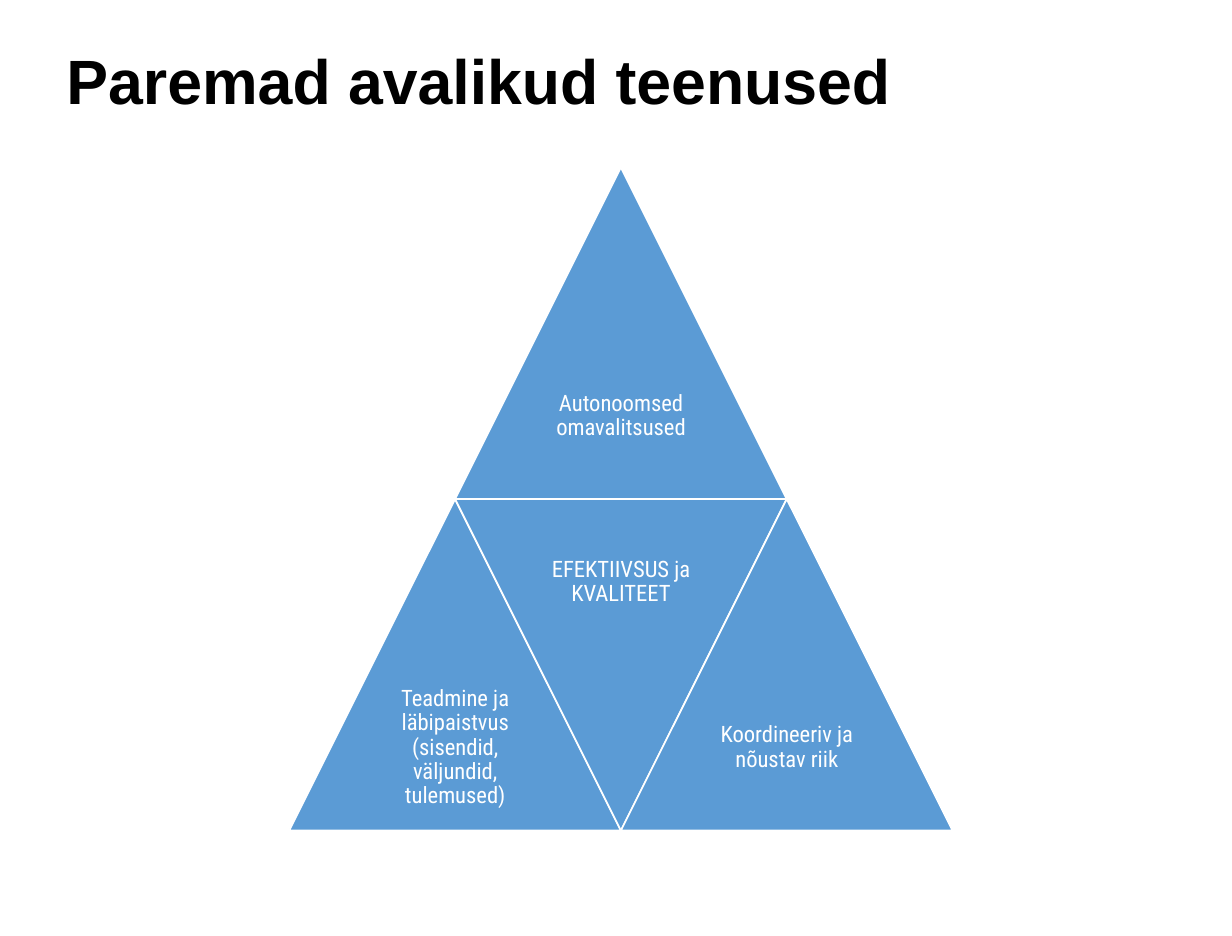
from dataclasses import dataclass

from pptx import Presentation
from pptx.dml.color import RGBColor
from pptx.enum.shapes import MSO_SHAPE
from pptx.enum.text import MSO_ANCHOR, PP_ALIGN
from pptx.util import Cm, Pt

TRIANGLE = MSO_SHAPE.ISOSCELES_TRIANGLE
TOP, MIDDLE = MSO_ANCHOR.TOP, MSO_ANCHOR.MIDDLE
LEFT, CENTER = PP_ALIGN.LEFT, PP_ALIGN.CENTER


@dataclass(frozen=True)
class Theme:
    ink: RGBColor = RGBColor(0x00, 0x00, 0x00)
    blue: RGBColor = RGBColor(0x5B, 0x9B, 0xD5)
    white: RGBColor = RGBColor(0xFF, 0xFF, 0xFF)
    title_font: str = "Arial"
    label_font: str = "Roboto Condensed"
    title_size: Pt = Pt(36)
    label_size: Pt = Pt(13)
    outline: Pt = Pt(1)


THEME = Theme()

# Column and row in half-triangle steps, whether it points down, label
TRIANGLES = [
    (1, 0, False, "Autonoomsed omavalitsused"),
    (0, 2, False, "Teadmine ja läbipaistvus (sisendid, väljundid, tulemused)"),
    (1, 2, True, "EFEKTIIVSUS ja KVALITEET"),
    (2, 2, False, "Koordineeriv ja nõustav riik"),
]


def add_text(s, box, text, margins, anchor, align, spacing):
    """Place a wrapped one-paragraph text box and return its paragraph."""
    tf = s.shapes.add_textbox(*box).text_frame
    tf.word_wrap = True
    tf.vertical_anchor = anchor
    tf.margin_left = tf.margin_right = margins[0]
    tf.margin_top = tf.margin_bottom = margins[1]
    p = tf.paragraphs[0]
    p.text = text
    p.alignment = align
    p.line_spacing = spacing
    return p


def add_title(s, box, text):
    p = add_text(s, box, text, (Cm(0.25), Cm(0.15)), TOP, LEFT, 0.88)
    p.font.name = THEME.title_font
    p.font.size = THEME.title_size
    p.font.bold = True
    p.font.color.rgb = THEME.ink


def add_triangle(s, x, y, side, points_down, label):
    sp = s.shapes.add_shape(TRIANGLE, x, y, side, side)
    sp.shadow.inherit = False
    sp.rotation = 180 if points_down else 0
    sp.fill.solid()
    sp.fill.fore_color.rgb = THEME.blue
    sp.line.color.rgb = THEME.white
    sp.line.width = THEME.outline

    # The label fills the middle of the triangle's wide half
    half = side // 2
    label_box = (x + side // 4, y if points_down else y + half, half, half)
    p = add_text(s, label_box, label, (Cm(0.13), Cm(0.13)), MIDDLE, CENTER, 0.9)
    p.space_after = Pt(4.55)
    p.font.name = THEME.label_font
    p.font.size = THEME.label_size
    p.font.color.rgb = THEME.white


def add_pyramid(s, left, top, size):
    side = size // 2
    step = side // 2
    for col, row, points_down, label in TRIANGLES:
        add_triangle(s, left + col * step, top + row * step, side,
                     points_down, label)


def main():
    prs = Presentation()
    prs.slide_width, prs.slide_height = Cm(25), Cm(19)
    s = prs.slides.add_slide(prs.slide_layouts[6])

    # Title
    add_title(s, (Cm(1.1), Cm(0.9), Cm(23.03), Cm(2.92)),
              "Paremad avalikud teenused")

    # Pyramid of four triangles
    add_pyramid(s, Cm(5.87), Cm(3.4), Cm(13.46))

    prs.save("out.pptx")


if __name__ == "__main__":
    main()
